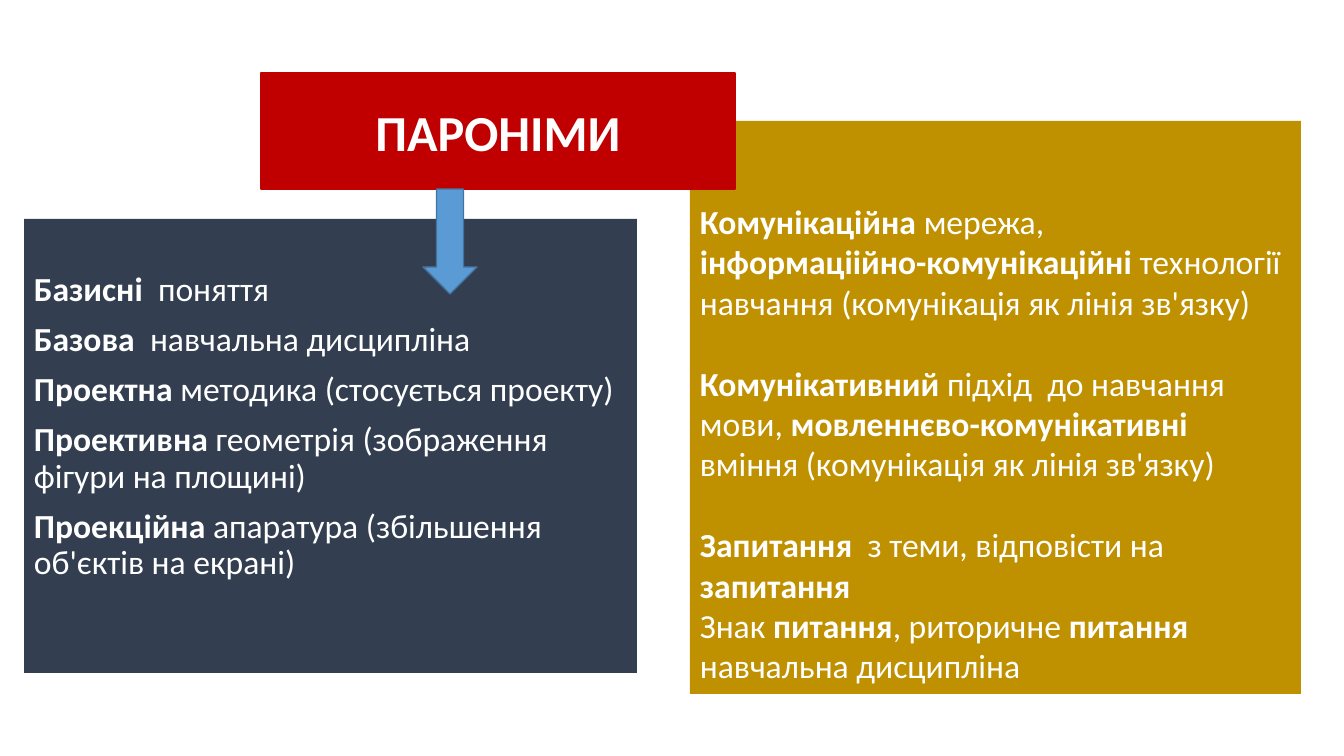
import pptx
import pptx.util
import pptx.dml.color
import pptx.enum.shapes
import pptx.enum.text

PX = 914400 / 100.8
SHAPE = pptx.enum.shapes.MSO_SHAPE
ALIGN = pptx.enum.text.PP_ALIGN
ANCHOR = pptx.enum.text.MSO_ANCHOR


def paint(form, color):
    form.solid()
    form.fore_color.rgb = pptx.dml.color.RGBColor.from_string(color)


def write(frame, text, size=24, color="FFFFFF", align=ALIGN.LEFT,
          anchor=ANCHOR.TOP, top=5, lead=1.0, gaps=(0,)):
    frame.word_wrap = True
    frame.auto_size = pptx.enum.text.MSO_AUTO_SIZE.NONE
    frame.vertical_anchor = anchor
    frame.margin_top = round(top * PX)
    for i, (line, gap) in enumerate(zip(text.split("\n"), gaps)):
        para = frame.paragraphs[0] if i == 0 else frame.add_paragraph()
        para.alignment = align
        para.line_spacing = lead
        para.space_before = pptx.util.Pt(gap)
        for j, part in enumerate(line.split("*")):
            if part:
                run = para.add_run()
                run.text = part
                run.font.name = "Calibri"
                run.font.size = pptx.util.Pt(size)
                run.font.bold = j % 2 == 1
                paint(run.font.fill, color)


deck = pptx.Presentation()
deck.slide_width = pptx.util.Inches(13.333)
deck.slide_height = pptx.util.Inches(7.5)
slide = deck.slides.add_slide(deck.slide_layouts[5])

LEFT = """*Базисні * поняття
*Базова*  навчальна дисципліна
*Проектна* методика (стосується проекту)
*Проективна* геометрія (зображення фігури на площині)
*Проекційна* апаратура (збільшення об'єктів на екрані)"""

RIGHT = """*Комунікаційна *мережа,
*інформаціійно-комунікаційні *технології навчання (комунікація як лінія зв'язку)
*Комунікативний *підхід  до навчання мови, *мовленнєво-комунікативні *вміння (комунікація як лінія зв'язку)
*Запитання * з теми, відповісти на *запитання*
Знак* питання*, риторичне *питання  *навчальна дисципліна"""

panels = [
    (24, 219, 613, 454, "333F50", LEFT,
     dict(top=53, lead=0.9, gaps=(0, 10, 10, 10, 10))),
    (690, 121, 611, 573, "BF9000", RIGHT,
     dict(top=80, gaps=(0, 0, 29, 29, 0))),
]
for x, y, w, h, color, text, look in panels:
    box = slide.shapes.add_shape(
        SHAPE.RECTANGLE, *[round(n * PX) for n in (x, y, w, h)])
    box.shadow.inherit = False
    paint(box.fill, color)
    box.line.fill.background()
    write(box.text_frame, text, **look)

title = slide.shapes.title
title.left, title.top, title.width, title.height = [
    round(n * PX) for n in (261, 73, 474, 116)]
paint(title.fill, "C00000")
paint(title.line.fill, "C00000")
title.line.width = pptx.util.Pt(1)
write(title.text_frame, "*ПАРОНІМИ*", size=36, align=ALIGN.CENTER,
      anchor=ANCHOR.MIDDLE)
tree = title._element.getparent()
tree.append(title._element)

arrow = slide.shapes.add_shape(
    SHAPE.DOWN_ARROW, *[round(n * PX) for n in (423, 189, 54, 105)])
arrow.shadow.inherit = False
paint(arrow.fill, "5B9BD5")
paint(arrow.line.fill, "43739E")
arrow.line.width = pptx.util.Pt(1)

deck.save("out.pptx")
